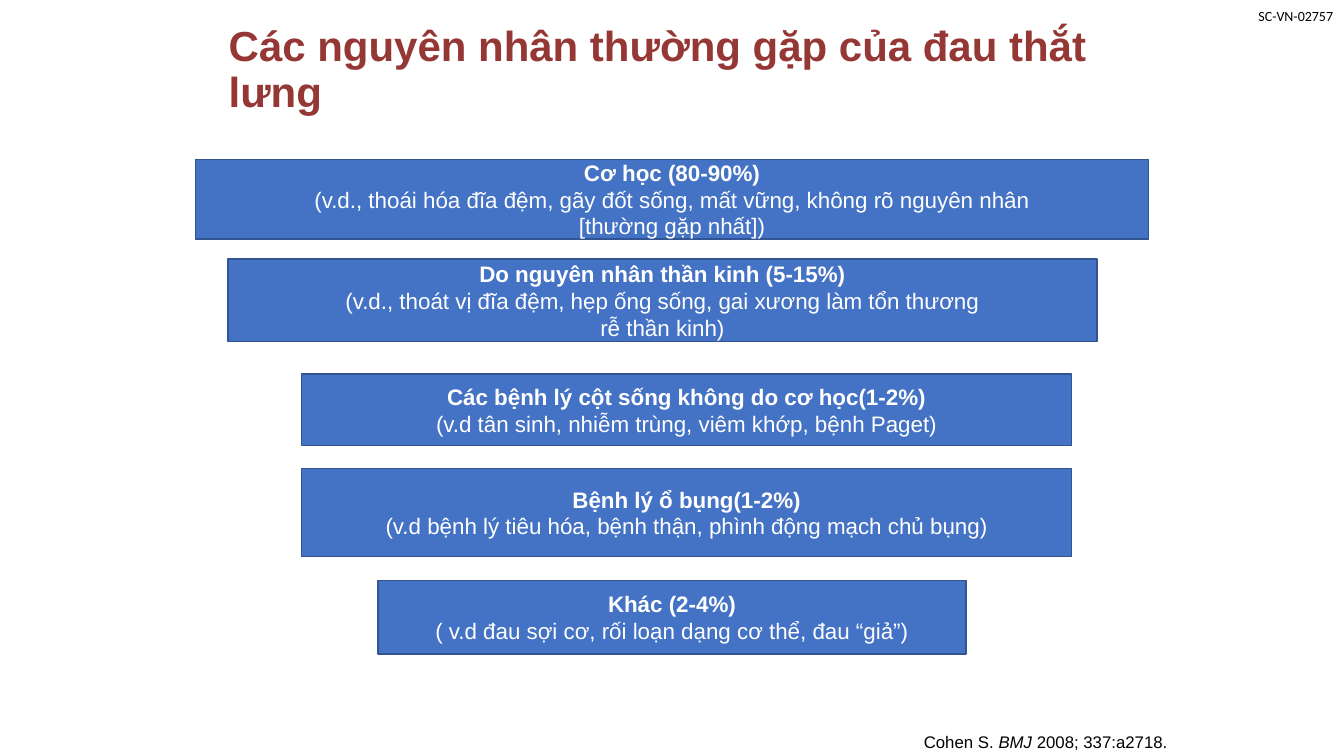
"""Build a slide on the common causes of low back pain."""
from pptx import Presentation
from pptx.dml.color import RGBColor
from pptx.enum.shapes import MSO_SHAPE
from pptx.enum.text import MSO_ANCHOR, PP_ALIGN
from pptx.util import Inches, Pt

RECTANGLE = MSO_SHAPE.RECTANGLE
MIDDLE, BOTTOM, TOP = MSO_ANCHOR.MIDDLE, MSO_ANCHOR.BOTTOM, MSO_ANCHOR.TOP
LEFT, CENTER, RIGHT = PP_ALIGN.LEFT, PP_ALIGN.CENTER, PP_ALIGN.RIGHT
BLACK = RGBColor(0x00, 0x00, 0x00)
WHITE = RGBColor(0xFF, 0xFF, 0xFF)
TITLE_RED = RGBColor(0x95, 0x37, 0x35)
BAR_BLUE = RGBColor(0x44, 0x72, 0xC4)
BAR_EDGE = RGBColor(0x32, 0x54, 0x91)


def style_span(span, size, color, name="Arial", bold=False, italic=False):
    span.font.name = name
    span.font.size = Pt(size)
    span.font.bold = bold
    span.font.italic = italic
    span.font.color.rgb = color


def add_text_box(page, place, anchor, align):
    box = page.shapes.add_textbox(*map(Inches, place))
    box.text_frame.word_wrap = True
    box.text_frame.vertical_anchor = anchor
    box.text_frame.paragraphs[0].alignment = align
    return box.text_frame


deck = Presentation()
deck.slide_width = Inches(13.33)
deck.slide_height = Inches(7.5)
page = deck.slides.add_slide(deck.slide_layouts[6])

code = add_text_box(page, (12.07, 0.03, 1.25, 0.27), TOP, RIGHT).paragraphs[0]
code.text = "SC-VN-02757"
style_span(code.runs[0], 10, BLACK, name="Calibri")

title = add_text_box(page, (2.17, 0.08, 9, 1.25), MIDDLE, LEFT).paragraphs[0]
title.text = "Các nguyên nhân thường gặp của đau thắt lưng"
title.line_spacing = 0.9
style_span(title.runs[0], 30, TITLE_RED, bold=True)

causes = [
    ((1.94, 1.58, 9.45, 0.79),
     ["Cơ học (80-90%)",
      "(v.d., thoái hóa đĩa đệm, gãy đốt sống, mất vững, không rõ nguyên nhân",
      "[thường gặp nhất])"]),
    ((2.26, 2.57, 8.62, 0.82),
     ["Do nguyên nhân thần kinh (5-15%)",
      "(v.d., thoát vị đĩa đệm, hẹp ống sống, gai xương làm tổn thương",
      "rễ thần kinh)"]),
    ((2.99, 3.71, 7.64, 0.71),
     ["Các bệnh lý cột sống không do cơ học(1-2%)",
      "(v.d tân sinh, nhiễm trùng, viêm khớp, bệnh Paget)"]),
    ((2.99, 4.65, 7.64, 0.87),
     ["Bệnh lý ổ bụng(1-2%)",
      "(v.d bệnh lý tiêu hóa, bệnh thận, phình động mạch chủ bụng)"]),
    ((3.75, 5.76, 5.83, 0.73),
     ["Khác (2-4%)",
      "( v.d đau sợi cơ, rối loạn dạng cơ thể, đau “giả”)"]),
]
for place, lines in causes:
    bar = page.shapes.add_shape(RECTANGLE, *map(Inches, place))
    bar.shadow.inherit = False
    bar.fill.solid()
    bar.fill.fore_color.rgb = BAR_BLUE
    bar.line.color.rgb = BAR_EDGE
    bar.line.width = Pt(1)
    frame = bar.text_frame
    frame.word_wrap = True
    frame.vertical_anchor = MIDDLE
    frame.text = "\n".join(lines)
    for index, para in enumerate(frame.paragraphs):
        para.alignment = CENTER
        style_span(para.runs[0], 16, WHITE, bold=index == 0)

citation = add_text_box(page, (1.89, 7.02, 9.69, 0.44), BOTTOM, RIGHT)
citation.margin_left = citation.margin_right = Inches(0)
citation.margin_top = citation.margin_bottom = Inches(0)
for words, italic in [("Cohen S. ", False), ("BMJ", True), (" 2008; 337:a2718.", False)]:
    span = citation.paragraphs[0].add_run()
    span.text = words
    style_span(span, 12, BLACK, italic=italic)

deck.save("out.pptx")
